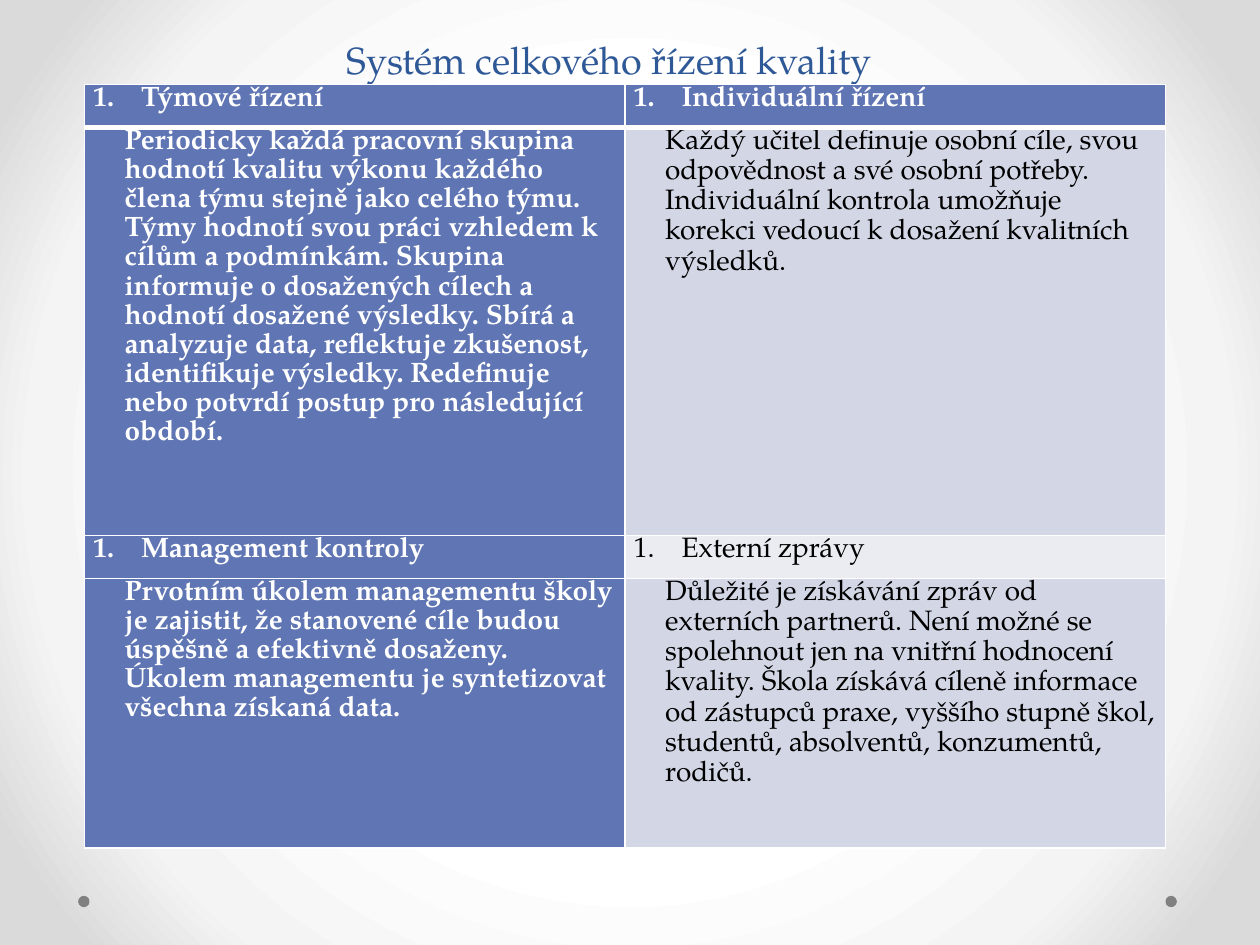
from lxml import etree
from pptx import Presentation
from pptx.dml.color import RGBColor
from pptx.enum import shapes, text
from pptx.oxml import ns
from pptx.util import Inches, Pt

FONT = "TeX Gyre Pagella"
WHITE = RGBColor(0xFF, 0xFF, 0xFF)
BLACK = RGBColor(0, 0, 0)
GRAY = RGBColor(0x80, 0x80, 0x80)
NAVY = RGBColor(0x2F, 0x58, 0x97)
BLUE = RGBColor(0x60, 0x76, 0xB4)
BAND = RGBColor(0xD2, 0xD6, 0xE5)
PALE = RGBColor(0xEA, 0xEC, 0xF2)
BACKDROP = [(50, WHITE), (76, RGBColor(0xF4, 0xF4, 0xF4)), (92, RGBColor(0xDA, 0xDA, 0xDA))]

ROW_HEIGHTS = [0.34, 3.24, 0.34, 2.14]
ROWS = [
    ("Týmové řízení", "Individuální řízení"),
    ("Periodicky každá pracovní skupina hodnotí kvalitu výkonu každého člena týmu "
     "stejně jako celého týmu. Týmy hodnotí svou práci vzhledem k cílům a podmínkám. "
     "Skupina informuje o dosažených cílech a hodnotí dosažené výsledky. Sbírá a "
     "analyzuje data, reflektuje zkušenost, identifikuje výsledky. Redefinuje nebo "
     "potvrdí postup pro následující období.",
     "Každý učitel definuje osobní cíle, svou odpovědnost a své osobní potřeby. "
     "Individuální kontrola umožňuje korekci vedoucí k dosažení kvalitních výsledků."),
    ("Management kontroly", "Externí zprávy"),
    ("Prvotním úkolem managementu školy je zajistit, že stanovené cíle budou úspěšně "
     "a efektivně dosaženy. Úkolem managementu je syntetizovat všechna získaná data.",
     "Důležité je získávání zpráv od externích partnerů. Není možné se spolehnout jen "
     "na vnitřní hodnocení kvality. Škola získává cíleně informace od zástupců praxe, "
     "vyššího stupně škol, studentů, absolventů, konzumentů, rodičů."),
]


def sub(parent, tag, **attrs):
    return etree.SubElement(parent, ns.qn(tag), attrs)


def set_background(s):
    fill = s.background.fill
    fill.gradient()
    grad = s.background._cSld.find(".//" + ns.qn("a:gradFill"))
    for child in list(grad):
        grad.remove(child)
    stops = sub(grad, "a:gsLst")
    for pos, color in BACKDROP:
        stop = sub(stops, "a:gs", pos=str(pos * 1000))
        sub(stop, "a:srgbClr", val=str(color))
    circle = sub(grad, "a:path", path="circle")
    sub(circle, "a:fillToRect", l="50000", t="50000", r="50000", b="50000")


def add_dots(s, lefts, top, size):
    for left in lefts:
        sp = s.shapes.add_shape(shapes.MSO_SHAPE.OVAL, Inches(left), Inches(top),
                                Inches(size), Inches(size))
        sp.shadow.inherit = False
        sp.fill.solid()
        sp.fill.fore_color.rgb = GRAY
        sp.line.fill.background()


def set_font(p, size, color, bold):
    p.font.name = FONT
    p.font.size = Pt(size)
    p.font.color.rgb = color
    p.font.bold = bold


def add_title(s, left, top, width, height):
    sp = s.shapes.title
    sp.left, sp.top, sp.width, sp.height = map(Inches, (left, top, width, height))
    tf = sp.text_frame
    tf.text = "Systém celkového řízení kvality"
    tf.word_wrap = True
    tf.auto_size = text.MSO_AUTO_SIZE.NONE
    tf.vertical_anchor = text.MSO_ANCHOR.BOTTOM
    p = tf.paragraphs[0]
    p.alignment = text.PP_ALIGN.CENTER
    p.line_spacing = Pt(58)
    set_font(p, 21.6, NAVY, False)


def set_borders(cell, widths):
    tc_pr = cell._tc.get_or_add_tcPr()
    for i, (side, width) in enumerate(widths.items()):
        ln = etree.Element(ns.qn("a:ln" + side), w=str(Pt(width)))
        sub(sub(ln, "a:solidFill"), "a:srgbClr", val=str(WHITE))
        tc_pr.insert(i, ln)


def fill_cell(cell, words, row, col):
    heading = row % 2 == 0
    strong = row == 0 or col == 0
    cell.margin_left = cell.margin_right = Inches(0.07)
    cell.margin_top = cell.margin_bottom = 0
    cell.fill.solid()
    cell.fill.fore_color.rgb = BLUE if strong else PALE if heading else BAND
    set_borders(cell, {"L": 1, "R": 1, "T": 3 if row == 1 else 1, "B": 3 if row == 0 else 1})
    cell.text = words
    p = cell.text_frame.paragraphs[0]
    p.line_spacing = 1.07
    set_font(p, 16, WHITE if strong else BLACK, strong)
    p_pr = p._p.get_or_add_pPr()
    p_pr.set("marL", str(Inches(0.38 if heading else 0.25)))
    p_pr.set("indent", str(Inches(-0.38 if heading else 0)))
    if heading:
        p_pr.find(ns.qn("a:defRPr")).addprevious(
            etree.Element(ns.qn("a:buAutoNum"), type="arabicPeriod"))


def add_quality_table(s, left, top, width):
    table = s.shapes.add_table(len(ROWS), 2, Inches(left), Inches(top), Inches(width),
                               Inches(sum(ROW_HEIGHTS))).table
    table.horz_banding = False
    for col in table.columns:
        col.width = Inches(width / 2)
    for i, (height, words) in enumerate(zip(ROW_HEIGHTS, ROWS)):
        table.rows[i].height = Inches(height)
        for j, value in enumerate(words):
            fill_cell(table.cell(i, j), value, i, j)


def main():
    prs = Presentation()
    prs.slide_width, prs.slide_height = Inches(10), Inches(7.5)
    s = prs.slides.add_slide(prs.slide_layouts[5])
    set_background(s)
    add_dots(s, (9.25, 0.62), 7.11, 0.09)
    add_title(s, 0, 0.17, 9.67, 0.53)
    add_quality_table(s, 0.67, 0.67, 8.58)
    prs.save("out.pptx")


if __name__ == "__main__":
    main()
